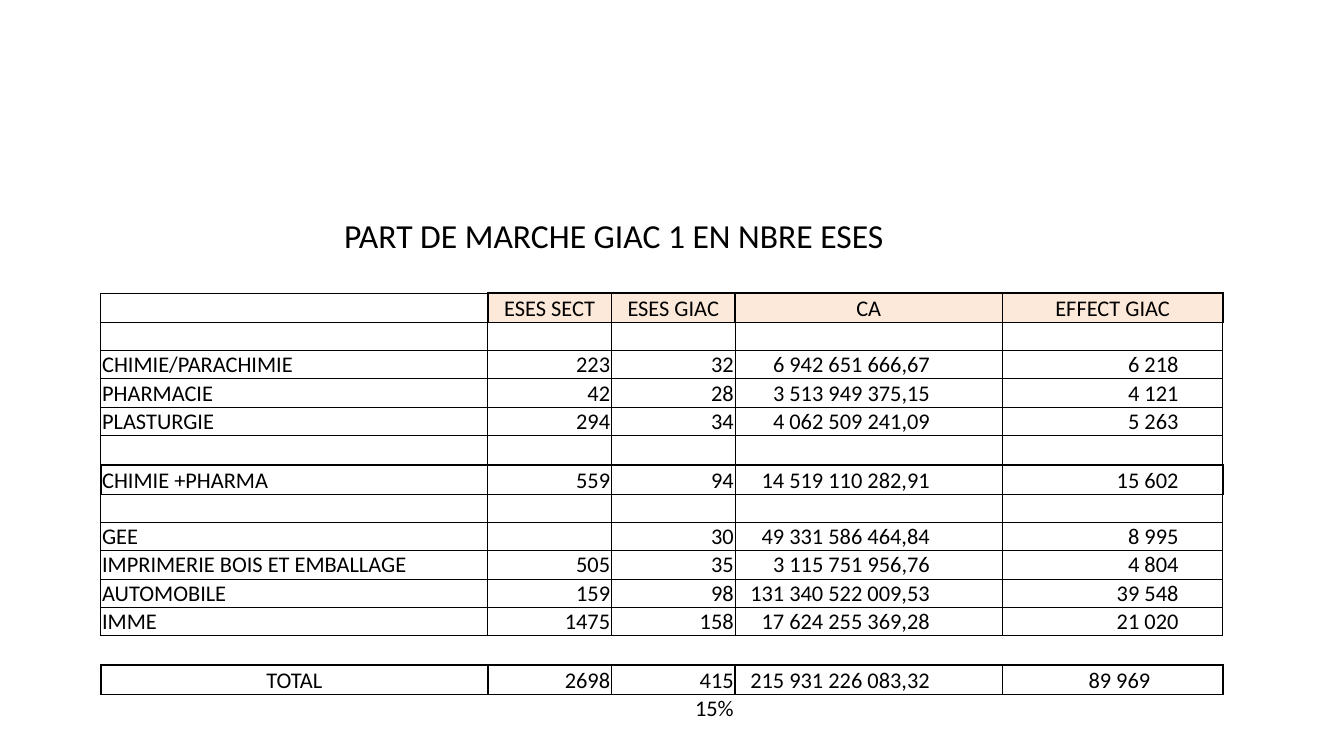
from lxml.etree import SubElement
from pptx import Presentation
from pptx.dml.color import RGBColor
from pptx.enum.text import MSO_ANCHOR, PP_ALIGN
from pptx.oxml.ns import qn
from pptx.util import Inches, Pt

COLORS = {"ink": "000000", "header": "FDE9D9"}
FONT = "Calibri"
THIN, THICK = 0.5, 1

COLUMN_WIDTHS = [2.88, 0.92, 0.92, 1.99, 1.64]
ALIGNMENTS = [PP_ALIGN.LEFT] + [PP_ALIGN.RIGHT] * 4
RIGHT_MARGINS = [0.01, 0.01, 0.01, 0.54, 0.33]
BLANK = [""] * 5
ROWS = [
    ["", "ESES SECT", "ESES GIAC", "CA", "EFFECT GIAC"],
    BLANK,
    ["CHIMIE/PARACHIMIE", "223", "32", "6 942 651 666,67", "6 218"],
    ["PHARMACIE", "42", "28", "3 513 949 375,15", "4 121"],
    ["PLASTURGIE", "294", "34", "4 062 509 241,09", "5 263"],
    BLANK,
    ["CHIMIE +PHARMA", "559", "94", "14 519 110 282,91", "15 602"],
    BLANK,
    ["GEE", "", "30", "49 331 586 464,84", "8 995"],
    ["IMPRIMERIE BOIS ET EMBALLAGE", "505", "35", "3 115 751 956,76", "4 804"],
    ["AUTOMOBILE", "159", "98", "131 340 522 009,53", "39 548"],
    ["IMME", "1475", "158", "17 624 255 369,28", "21 020"],
    BLANK,
    ["TOTAL", "2698", "415", "215 931 226 083,32", "89 969"],
    ["", "", "15%", "", ""],
]
HEADER, SUBTOTAL, GAP, TOTAL, SHARE = 0, 6, 12, 13, 14
TALL_ROWS = {HEADER, 5, SUBTOTAL, GAP, TOTAL}


def format_text(paragraph, size):
    for run in paragraph.runs:
        run.font.name = FONT
        run.font.size = Pt(size)
        run.font.color.rgb = RGBColor.from_string(COLORS["ink"])


def horizontal_width(line, column):
    if line == len(ROWS):
        return 0
    if line in (HEADER, HEADER + 1):
        return THICK if column else THIN
    return THICK if line in (SUBTOTAL, SUBTOTAL + 1, TOTAL, SHARE) else THIN


def vertical_width(row, line):
    if row in (GAP, SHARE):
        return 0
    if row == HEADER:
        return THICK if line else THIN
    outer = line in (0, len(COLUMN_WIDTHS))
    return THICK if row == TOTAL or (row == SUBTOTAL and outer) else THIN


def set_borders(cell, row, column):
    properties = cell._tc.get_or_add_tcPr()
    widths = {
        "a:lnL": vertical_width(row, column),
        "a:lnR": vertical_width(row, column + 1),
        "a:lnT": horizontal_width(row, column),
        "a:lnB": horizontal_width(row + 1, column),
    }
    for side, width in widths.items():
        border = SubElement(properties, qn(side), w=str(Pt(width)))
        if width:
            fill = SubElement(border, qn("a:solidFill"))
            SubElement(fill, qn("a:srgbClr"), val=COLORS["ink"])
        else:
            SubElement(border, qn("a:noFill"))


def fill_cell(cell, row, column, text):
    set_borders(cell, row, column)
    if row == HEADER and column:
        cell.fill.solid()
        cell.fill.fore_color.rgb = RGBColor.from_string(COLORS["header"])
    else:
        cell.fill.background()

    centered = row == HEADER or (row == TOTAL and column == 0)
    right = 0.01 if centered else RIGHT_MARGINS[column]
    if row == TOTAL and column == 4:
        right = 0.54
    cell.margin_left = Inches(0.01)
    cell.margin_right = Inches(right)
    cell.margin_top = cell.margin_bottom = 0
    cell.vertical_anchor = MSO_ANCHOR.BOTTOM

    paragraph = cell.text_frame.paragraphs[0]
    paragraph.text = text
    paragraph.alignment = PP_ALIGN.CENTER if centered else ALIGNMENTS[column]
    format_text(paragraph, 12)
    if not text:
        SubElement(paragraph._p, qn("a:endParaRPr"), sz="1200")


def add_title(slide, left, top, width, height):
    title = slide.shapes.title
    title.left, title.top = Inches(left), Inches(top)
    title.width, title.height = Inches(width), Inches(height)
    frame = title.text_frame
    frame.text = "PART DE MARCHE GIAC 1 EN NBRE ESES"
    frame.word_wrap = True
    frame.margin_left = Inches(0.16)
    frame.vertical_anchor = MSO_ANCHOR.MIDDLE
    frame.paragraphs[0].alignment = PP_ALIGN.LEFT
    format_text(frame.paragraphs[0], 18)


def add_market_table(slide, left, top, width, height):
    table = slide.shapes.add_table(
        len(ROWS), len(COLUMN_WIDTHS),
        Inches(left), Inches(top), Inches(width), Inches(height),
    ).table
    table.first_row = table.horz_banding = False
    for column, column_width in zip(table.columns, COLUMN_WIDTHS):
        column.width = Inches(column_width)
    for row, texts in enumerate(ROWS):
        table.rows[row].height = Inches(0.22 if row in TALL_ROWS else 0.21)
        for column, text in enumerate(texts):
            fill_cell(table.cell(row, column), row, column, text)


def main():
    presentation = Presentation()
    presentation.slide_width = Inches(10)
    presentation.slide_height = presentation.slide_width * 9 // 16
    slide = presentation.slides.add_slide(presentation.slide_layouts[5])
    add_title(slide, 2.4, 1.55, 4.49, 0.4)
    add_market_table(slide, 0.75, 2.18, 8.35, 3.21)
    presentation.save("out.pptx")


if __name__ == "__main__":
    main()
